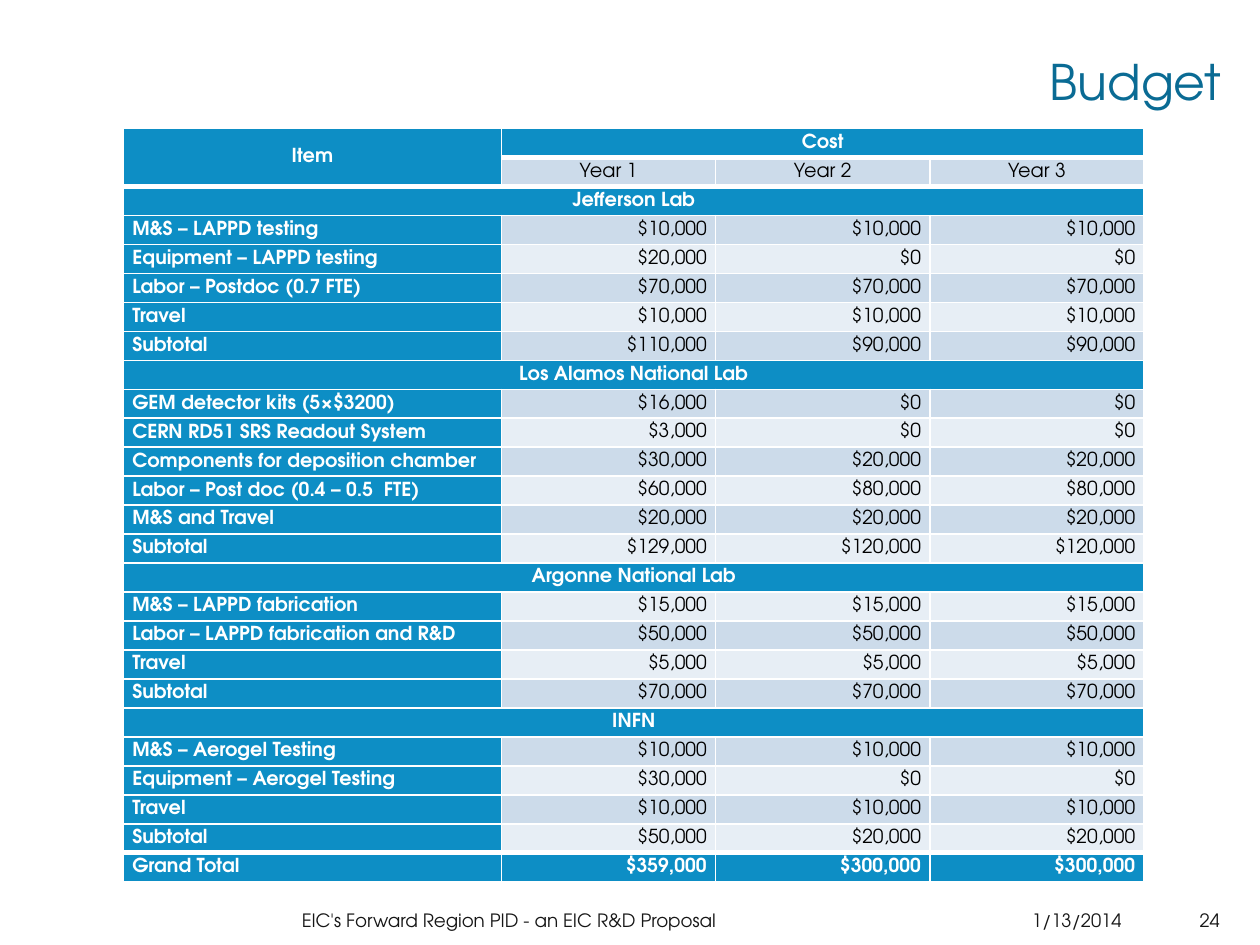
from lxml import etree
from pptx import Presentation
from pptx.dml.color import RGBColor
from pptx.enum import text
from pptx.oxml import ns
from pptx.util import Inches, Pt

FONT = "TeX Gyre Adventor"
WHITE = RGBColor(0xFF, 0xFF, 0xFF)
BLACK = RGBColor(0x00, 0x00, 0x00)
TITLE_BLUE = RGBColor(0x0A, 0x6B, 0x94)
HEADER_BLUE = RGBColor(0x0D, 0x8E, 0xC5)
BAND_DARK = RGBColor(0xCC, 0xDB, 0xEA)
BAND_LIGHT = RGBColor(0xE7, 0xEE, 0xF5)
FOOTER_GREY = RGBColor(0x16, 0x16, 0x16)

LEFT, CENTER, RIGHT = (text.PP_ALIGN.LEFT, text.PP_ALIGN.CENTER,
                       text.PP_ALIGN.RIGHT)
MIDDLE, BOTTOM = text.MSO_ANCHOR.MIDDLE, text.MSO_ANCHOR.BOTTOM

COLUMN_WIDTHS = [3, 1.7, 1.7, 1.7]
ROW_HEIGHT = 0.23
THIN, THICK = 1, 3

# A row with a single entry is a laboratory heading across the table.
BUDGET = [
    ["Item", "Cost"],
    ["", "Year 1", "Year 2", "Year 3"],
    ["Jefferson Lab"],
    ["M&S – LAPPD testing", "$10,000", "$10,000", "$10,000"],
    ["Equipment – LAPPD testing", "$20,000", "$0", "$0"],
    ["Labor – Postdoc (0.7 FTE)", "$70,000", "$70,000", "$70,000"],
    ["Travel", "$10,000", "$10,000", "$10,000"],
    ["Subtotal", "$110,000", "$90,000", "$90,000"],
    ["Los Alamos National Lab"],
    ["GEM detector kits (5×$3200)", "$16,000", "$0", "$0"],
    ["CERN RD51 SRS Readout System", "$3,000", "$0", "$0"],
    ["Components for deposition chamber", "$30,000", "$20,000", "$20,000"],
    ["Labor – Post doc (0.4 – 0.5  FTE)", "$60,000", "$80,000", "$80,000"],
    ["M&S and Travel", "$20,000", "$20,000", "$20,000"],
    ["Subtotal", "$129,000", "$120,000", "$120,000"],
    ["Argonne National Lab"],
    ["M&S – LAPPD fabrication", "$15,000", "$15,000", "$15,000"],
    ["Labor – LAPPD fabrication and R&D", "$50,000", "$50,000", "$50,000"],
    ["Travel", "$5,000", "$5,000", "$5,000"],
    ["Subtotal", "$70,000", "$70,000", "$70,000"],
    ["INFN"],
    ["M&S – Aerogel Testing", "$10,000", "$10,000", "$10,000"],
    ["Equipment – Aerogel Testing", "$30,000", "$0", "$0"],
    ["Travel", "$10,000", "$10,000", "$10,000"],
    ["Subtotal", "$50,000", "$20,000", "$20,000"],
    ["Grand Total", "$359,000", "$300,000", "$300,000"],
]
LAST_ROW = len(BUDGET) - 1


def write_text(frame, content, *, size, color, align, bold=False,
               line_spacing=None):
    paragraph = frame.paragraphs[0]
    paragraph.alignment = align
    if line_spacing:
        paragraph.line_spacing = line_spacing
    run = paragraph.add_run()
    run.text = content
    run.font.name = FONT
    run.font.size = Pt(size)
    run.font.bold = bold
    run.font.color.rgb = color


def add_label(slide, box, content, *, anchor=MIDDLE, **text_format):
    """Add a wrapping text box; box is left, top, width, height in inches."""
    shape = slide.shapes.add_textbox(*map(Inches, box))
    shape.text_frame.word_wrap = True
    shape.text_frame.vertical_anchor = anchor
    write_text(shape.text_frame, content, **text_format)


def set_borders(cell, top, bottom):
    """Draw white borders; only the top and bottom widths vary."""
    properties = cell._tc.get_or_add_tcPr()
    widths = {"lnL": THIN, "lnR": THIN, "lnT": top, "lnB": bottom}
    for side, width in widths.items():
        line = etree.SubElement(properties, ns.qn(f"a:{side}"), w=str(Pt(width)))
        fill = etree.SubElement(line, ns.qn("a:solidFill"))
        etree.SubElement(fill, ns.qn("a:srgbClr"), val=str(WHITE))


def style_cell(cell, row, column):
    """Set borders, insets and fill; return whether the cell is a heading."""
    heading = (column == 0 or row in (0, LAST_ROW) or len(BUDGET[row]) == 1)
    set_borders(cell,
                top=THICK if row in (1, 2, LAST_ROW) else THIN,
                bottom=THICK if row in (0, 1, LAST_ROW - 1) else THIN)
    cell.margin_left = cell.margin_right = Inches(0.07)
    cell.margin_top = cell.margin_bottom = 0
    cell.vertical_anchor = MIDDLE
    cell.fill.solid()
    band = BAND_DARK if row % 2 else BAND_LIGHT
    cell.fill.fore_color.rgb = HEADER_BLUE if heading else band
    return heading


def alignment_for(row, column):
    if row < 2 or len(BUDGET[row]) == 1:
        return CENTER
    return RIGHT if column else LEFT


def add_budget_table(slide):
    row_count, column_count = len(BUDGET), len(COLUMN_WIDTHS)
    table = slide.shapes.add_table(
        row_count, column_count, Inches(0.98), Inches(1.02),
        Inches(sum(COLUMN_WIDTHS)), Inches(ROW_HEIGHT * row_count)).table
    table.first_row = table.horz_banding = False
    for column, width in zip(table.columns, COLUMN_WIDTHS):
        column.width = Inches(width)
    for row in table.rows:
        row.height = Inches(ROW_HEIGHT)

    table.cell(0, 0).merge(table.cell(1, 0))
    table.cell(0, 1).merge(table.cell(0, column_count - 1))
    for row, entries in enumerate(BUDGET):
        if len(entries) == 1:
            table.cell(row, 0).merge(table.cell(row, column_count - 1))
        for column in range(column_count):
            cell = table.cell(row, column)
            heading = style_cell(cell, row, column)
            if not cell.is_spanned:
                write_text(cell.text_frame, entries[column], size=11,
                           color=WHITE if heading else BLACK, bold=heading,
                           align=alignment_for(row, column))


def main():
    presentation = Presentation()
    presentation.slide_width = Inches(10)
    presentation.slide_height = Inches(7.5)
    slide = presentation.slides.add_slide(presentation.slide_layouts[6])

    add_label(slide, (2.05, 0.09, 7.74, 0.84), "Budget", anchor=BOTTOM,
              size=28, color=TITLE_BLUE, align=RIGHT, line_spacing=0.9)
    add_budget_table(slide)
    for left, width, content, align in [
        (0.25, 7.58, "EIC's Forward Region PID - an EIC R&D Proposal", CENTER),
        (7.92, 1.25, "1/13/2014", CENTER),
        (9.25, 0.53, "24", RIGHT),
    ]:
        add_label(slide, (left, 7.1, width, 0.4), content,
                  size=10.5, color=FOOTER_GREY, align=align)

    presentation.save("out.pptx")


if __name__ == "__main__":
    main()
